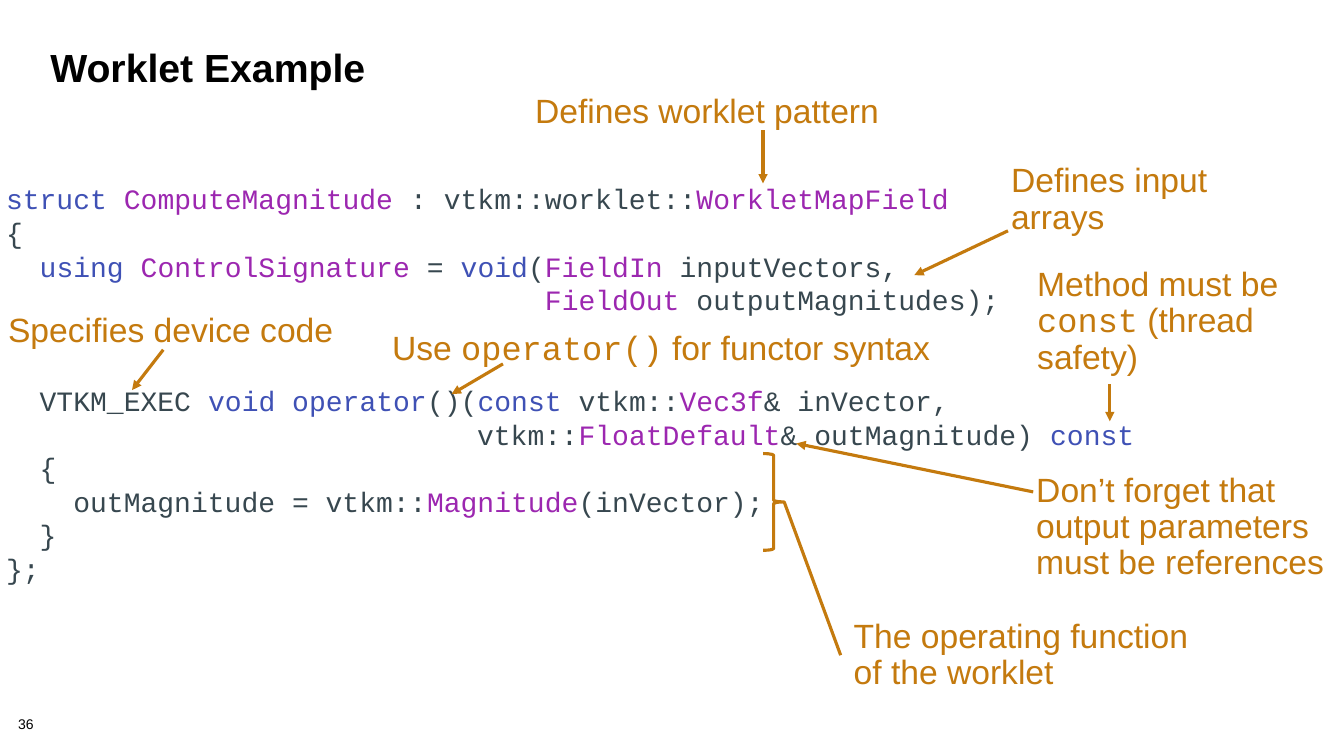
from dataclasses import dataclass
from typing import NamedTuple

from lxml import etree
from pptx import Presentation
from pptx.dml.color import RGBColor
from pptx.enum.shapes import MSO_CONNECTOR, MSO_SHAPE
from pptx.enum.text import MSO_ANCHOR
from pptx.oxml.ns import qn
from pptx.util import Inches, Pt

STRAIGHT = MSO_CONNECTOR.STRAIGHT
RIGHT_BRACE = MSO_SHAPE.RIGHT_BRACE
TOP = MSO_ANCHOR.TOP
MIDDLE = MSO_ANCHOR.MIDDLE

BLACK = RGBColor(0x00, 0x00, 0x00)
AMBER = RGBColor(0xC4, 0x7A, 0x0E)
KEYWORD = RGBColor(0x3F, 0x51, 0xB5)
TYPE_NAME = RGBColor(0x9C, 0x27, 0xB0)
PLAIN = RGBColor(0x37, 0x47, 0x4F)

SANS = "Arial"
MONO = "Courier New"
STROKE = Pt(2.25)
CODE_LINE = Pt(24)

SLIDE_WIDTH = Inches(13.33)
SLIDE_HEIGHT = Inches(7.5)
COLUMN = SLIDE_WIDTH / 160
ROW = SLIDE_HEIGHT / 90
NOTE_PADDING = 2.52
NOTE_LINE = 4.32


class Box(NamedTuple):
    column: float
    row: float
    columns: float
    rows: float


class Point(NamedTuple):
    column: float
    row: float


class Run(NamedTuple):
    text: str
    color: RGBColor = PLAIN
    font: str = MONO


@dataclass(frozen=True)
class Callout:
    position: Point
    columns: float
    lines: int
    runs: list[Run]
    start: Point
    end: Point
    arrowhead: bool = True


def across(columns: float) -> int:
    return round(columns * COLUMN)


def down(rows: float) -> int:
    return round(rows * ROW)


def place(box: Box) -> tuple[int, int, int, int]:
    return across(box.column), down(box.row), across(box.columns), down(box.rows)


def add_text(slide, box: Box, paragraphs: list[list[Run]], *, size: float,
             bold: bool = False, spacing=1.0, anchor=TOP,
             inset: tuple[float, float] = (0, 0), gaps: dict | None = None) -> None:
    frame = slide.shapes.add_textbox(*place(box)).text_frame
    frame.word_wrap = True
    frame.vertical_anchor = anchor
    frame.margin_left = frame.margin_right = across(inset[0])
    frame.margin_top = frame.margin_bottom = down(inset[1])
    for index, runs in enumerate(paragraphs):
        paragraph = frame.add_paragraph() if index else frame.paragraphs[0]
        paragraph.line_spacing = spacing
        if gaps and index in gaps:
            paragraph.space_before = gaps[index]
        for text, color, font in runs:
            run = paragraph.add_run()
            run.text = text
            run.font.name = font
            run.font.size = Pt(size)
            run.font.bold = bold
            run.font.color.rgb = color


def add_pointer(slide, start: Point, end: Point, arrowhead: bool) -> None:
    pointer = slide.shapes.add_connector(
        STRAIGHT, across(start.column), down(start.row), across(end.column), down(end.row))
    pointer.line.color.rgb = AMBER
    pointer.line.width = STROKE
    properties = pointer.line._get_or_add_ln()
    if arrowhead:
        etree.SubElement(properties, qn("a:tailEnd"), type="triangle")
    etree.SubElement(properties.getparent(), qn("a:effectLst"))


def add_callout(slide, callout: Callout) -> None:
    box = Box(*callout.position, callout.columns, NOTE_PADDING + NOTE_LINE * callout.lines)
    add_text(slide, box, [callout.runs], size=24, spacing=0.9, anchor=MIDDLE,
             inset=(1.56, 1.2))
    add_pointer(slide, callout.start, callout.end, callout.arrowhead)


def add_brace(slide, box: Box) -> None:
    brace = slide.shapes.add_shape(RIGHT_BRACE, *place(box))
    brace.shadow.inherit = False
    brace.fill.background()
    brace.line.color.rgb = AMBER
    brace.line.width = STROKE


def note(text: str, font: str = SANS) -> Run:
    return Run(text, AMBER, font)


CODE = [
    [Run("struct ", KEYWORD), Run("ComputeMagnitude", TYPE_NAME),
     Run(" : vtkm::worklet::"), Run("WorkletMapField", TYPE_NAME)],
    [Run("{")],
    [Run("  "), Run("using ", KEYWORD), Run("ControlSignature", TYPE_NAME), Run(" = "),
     Run("void", KEYWORD), Run("("), Run("FieldIn ", TYPE_NAME), Run("inputVectors,")],
    [Run("                                "), Run("FieldOut ", TYPE_NAME),
     Run("outputMagnitudes);")],
    [Run("  VTKM_EXEC "), Run("void operator", KEYWORD), Run("()("),
     Run("const ", KEYWORD), Run("vtkm::"), Run("Vec3f", TYPE_NAME), Run("& inVector,")],
    [Run("                            vtkm::"), Run("FloatDefault", TYPE_NAME),
     Run("& outMagnitude) "), Run("const", KEYWORD)],
    [Run("  {")],
    [Run("    outMagnitude = vtkm::"), Run("Magnitude", TYPE_NAME), Run("(inVector);")],
    [Run("  }")],
    [Run("};")],
]
OPERATOR_LINE = 4

CALLOUTS = [
    Callout(Point(121.8, 55.08), 38.16, 3,
            [note("Don’t forget that output parameters must be references")],
            Point(123, 58.56), Point(94.8, 52.8)),
    Callout(Point(100.08, 72.48), 45.84, 2,
            [note("The operating function of the worklet")],
            Point(100.08, 78), Point(93.36, 59.76), arrowhead=False),
    Callout(Point(45.12, 38.16), 72.36, 1,
            [note("Use "), note("operator()", MONO), note(" for functor syntax")],
            Point(59.88, 43.32), Point(53.76, 46.92)),
    Callout(Point(121.92, 30.6), 32.16, 3,
            [note("Method must be "), note("const", MONO), note(" (thread safety)")],
            Point(132.12, 45.72), Point(132.12, 50.16)),
    Callout(Point(118.8, 18.24), 29.52, 2, [note("Defines input arrays")],
            Point(120, 27.48), Point(108.84, 32.76)),
    Callout(Point(62.16, 9.96), 46.68, 1, [note("Defines worklet pattern")],
            Point(90.84, 15.48), Point(90.84, 21.84)),
    Callout(Point(-0.6, 36), 45.72, 1, [note("Specifies device code")],
            Point(19.44, 41.64), Point(15.72, 46.44)),
]


def main() -> None:
    deck = Presentation()
    deck.slide_width = SLIDE_WIDTH
    deck.slide_height = SLIDE_HEIGHT
    slide = deck.slides.add_slide(deck.slide_layouts[6])
    add_text(slide, Box(2.16, 85.44, 6.72, 1.92), [[Run("36", BLACK, SANS)]],
             size=10, spacing=0.9)
    add_text(slide, Box(4.8, 5.4, 149.28, 12), [[Run("Worklet Example", BLACK, SANS)]],
             size=28, bold=True, spacing=0.85, inset=(1.2, 0.6))
    add_text(slide, Box(0, 20.76, 136.68, 49.8), CODE, size=20, spacing=CODE_LINE,
             anchor=MIDDLE, inset=(0.72, 0.72), gaps={OPERATOR_LINE: 2 * CODE_LINE})
    add_brace(slide, Box(90.84, 54, 2.52, 11.52))
    for callout in CALLOUTS:
        add_callout(slide, callout)
    deck.save("out.pptx")


if __name__ == "__main__":
    main()
